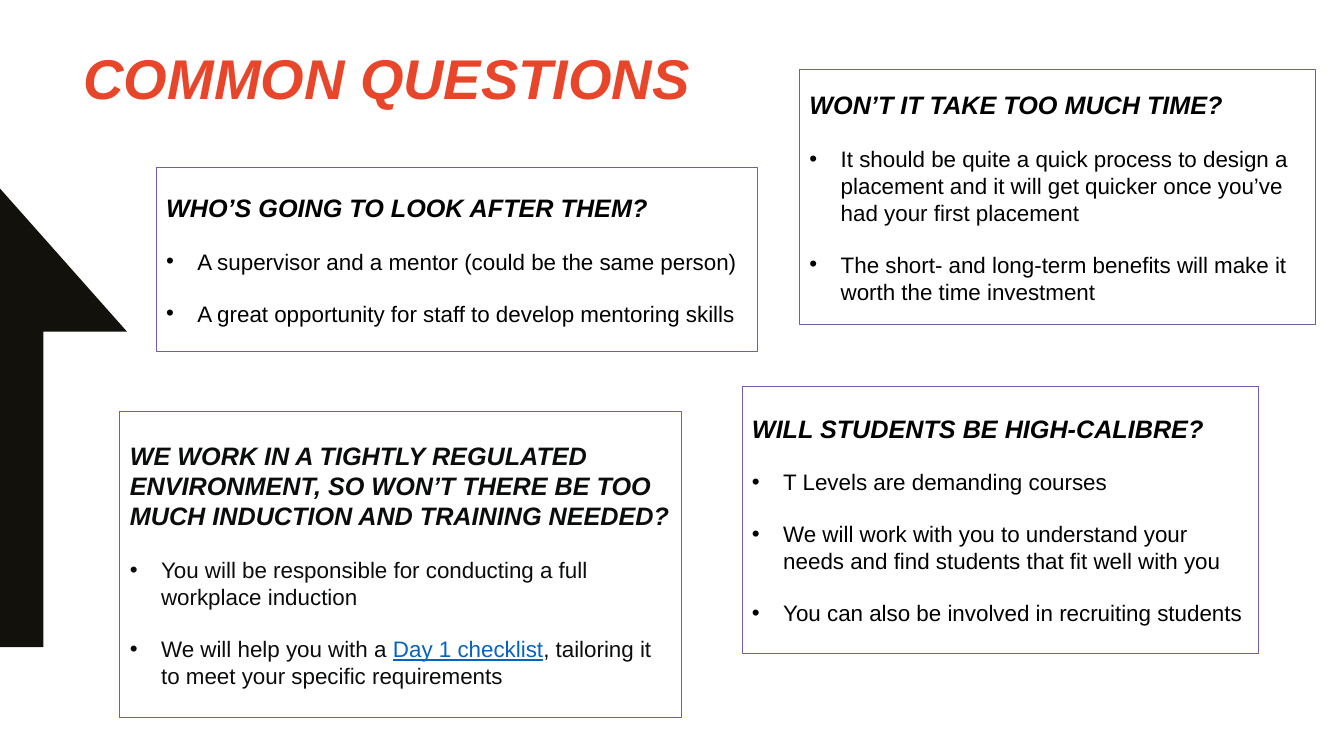
from dataclasses import dataclass

from lxml import etree
from pptx import Presentation
from pptx import util as u
from pptx.dml.color import RGBColor
from pptx.enum import shapes, text
from pptx.oxml import ns
from pptx.slide import Slide
from pptx.text.text import TextFrame, _Paragraph

BLACK = RGBColor(0x00, 0x00, 0x00)
INK = RGBColor(0x0B, 0x0C, 0x0C)
ARROW = RGBColor(0x12, 0x11, 0x0C)
PURPLE = RGBColor(0x76, 0x5A, 0xB0)
ORANGE = RGBColor(0xE8, 0x46, 0x2B)
LINK_BLUE = RGBColor(0x05, 0x63, 0xC1)
FONT = "Arial"
HALF_GAP = u.Pt(9)
BULLET_INDENT = u.Inches(0.31)


@dataclass(frozen=True)
class Span:
    wording: str
    link: bool = False


@dataclass(frozen=True)
class Question:
    left: float
    top: float
    width: float
    height: float
    heading: str
    answers: list[list[Span]]
    color: RGBColor = BLACK


QUESTIONS = [
    Question(1.55, 1.66, 5.96, 1.83, "WHO’S GOING TO LOOK AFTER THEM?", [
        [Span("A supervisor and a mentor (could be the same person)")],
        [Span("A great opportunity for staff to develop mentoring skills")],
    ]),
    Question(7.93, 0.69, 5.12, 2.53, "WON’T IT TAKE TOO MUCH TIME?", [
        [Span("It should be quite a quick process to design a placement "
              "and it will get quicker once you’ve had your first placement")],
        [Span("The short- and long-term benefits will make it worth the time investment")],
    ]),
    Question(7.36, 3.83, 5.12, 2.65, "WILL STUDENTS BE HIGH-CALIBRE?", [
        [Span("T Levels are demanding courses")],
        [Span("We will work with you to understand your needs "
              "and find students that fit well with you")],
        [Span("You can also be involved in recruiting students")],
    ]),
    Question(
        1.19, 4.08, 5.57, 3.04,
        "WE WORK IN A TIGHTLY REGULATED ENVIRONMENT, SO WON’T THERE BE TOO "
        "MUCH INDUCTION AND TRAINING NEEDED?",
        [
            [Span("You will be responsible for conducting a full workplace induction")],
            [Span("We will help you with a "), Span("Day 1 checklist", link=True),
             Span(", tailoring it to meet your specific requirements")],
        ],
        INK,
    ),
]

ARROW_OUTLINE = [(0.43, 3.29), (1.26, 3.29), (0, 1.87), (0, 6.42), (0.43, 6.42)]


def add_span(paragraph: _Paragraph, span: Span, size: float,
             color: RGBColor, strong: bool = False) -> None:
    run = paragraph.add_run()
    run.text = span.wording
    run.font.name = FONT
    run.font.size = u.Pt(size)
    run.font.bold = run.font.italic = strong
    run.font.color.rgb = LINK_BLUE if span.link else color
    run.font.underline = span.link


def add_answer(frame: TextFrame, answer: list[Span], color: RGBColor) -> None:
    paragraph = frame.add_paragraph()
    properties = paragraph._p.get_or_add_pPr()
    properties.set("marL", str(BULLET_INDENT))
    properties.set("indent", str(-BULLET_INDENT))
    etree.SubElement(properties, ns.qn("a:buFont"), typeface=FONT)
    etree.SubElement(properties, ns.qn("a:buChar"), char="•")
    paragraph.alignment = text.PP_ALIGN.LEFT
    paragraph.space_before = HALF_GAP
    for span in answer:
        add_span(paragraph, span, 16, color)


def add_question(slide: Slide, question: Question) -> None:
    box = slide.shapes.add_shape(
        shapes.MSO_SHAPE.RECTANGLE,
        u.Inches(question.left), u.Inches(question.top),
        u.Inches(question.width), u.Inches(question.height),
    )
    box.shadow.inherit = False
    box.fill.background()
    box.line.color.rgb = PURPLE
    box.line.width = u.Pt(0.75)
    frame = box.text_frame
    frame.word_wrap = True
    frame.vertical_anchor = text.MSO_ANCHOR.MIDDLE
    heading = frame.paragraphs[0]
    heading.alignment = text.PP_ALIGN.LEFT
    add_span(heading, Span(question.heading), 18, question.color, strong=True)
    for answer in question.answers:
        add_answer(frame, answer, question.color)
    for paragraph in frame.paragraphs[:-1]:
        paragraph.space_after = HALF_GAP


def add_arrow(slide: Slide) -> None:
    start, *corners = [(u.Inches(x), u.Inches(y)) for x, y in ARROW_OUTLINE]
    builder = slide.shapes.build_freeform(*start)
    builder.add_line_segments(corners, close=True)
    arrow = builder.convert_to_shape()
    arrow.shadow.inherit = False
    arrow.fill.solid()
    arrow.fill.fore_color.rgb = ARROW
    arrow.line.fill.background()


def add_title(slide: Slide) -> None:
    title = slide.shapes.add_textbox(
        u.Inches(0.73), u.Inches(0.38), u.Inches(11.81), u.Inches(1.42))
    title.text_frame.word_wrap = True
    add_span(title.text_frame.paragraphs[0], Span("COMMON QUESTIONS"),
             40, ORANGE, strong=True)


def main() -> None:
    deck = Presentation()
    deck.slide_width = u.Inches(13.33)
    deck.slide_height = u.Inches(7.5)
    slide = deck.slides.add_slide(deck.slide_layouts[6])
    add_arrow(slide)
    for question in QUESTIONS:
        add_question(slide, question)
    add_title(slide)
    deck.save("out.pptx")


if __name__ == "__main__":
    main()
